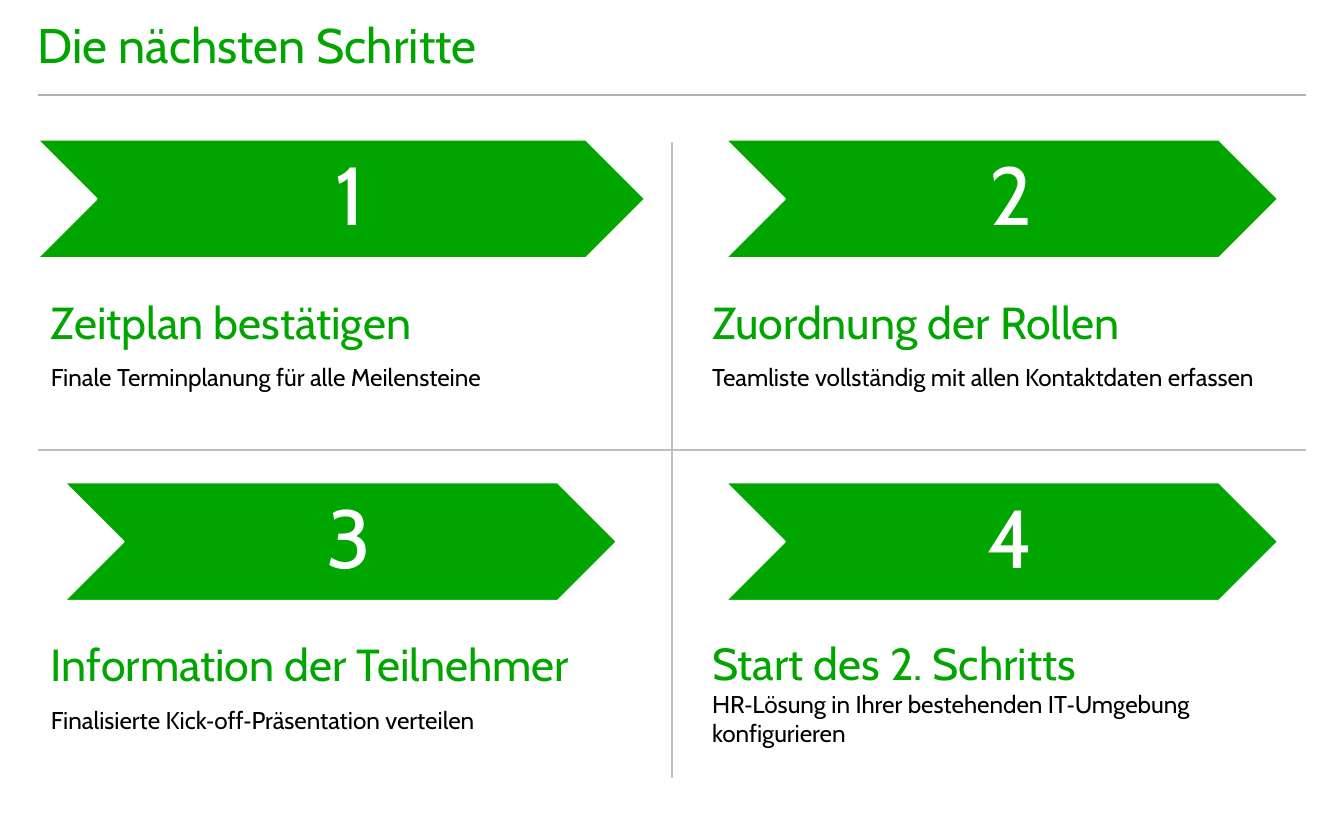
from lxml import etree
from pptx import Presentation
from pptx import util as u
from pptx.dml.color import RGBColor
from pptx.enum import shapes, text
from pptx.oxml.ns import qn

PX = 9144  # EMU per px, 100 px to the inch
FONT = "Cabin"
COLORS = {"green": "00A500", "white": "FFFFFF", "black": "000000",
          "divider": "BFBFBF", "title_rule": "B2B2B2"}

# number, chevron (left, width), text (left, top, width, height), heading, detail, detail spacing
TOP_ROW, BOTTOM_ROW = 104, 359
STEPS = [
    ("1", TOP_ROW, (28, 452), (28, 194, 453, 99),
     "Zeitplan bestätigen", "Finale Terminplanung für alle Meilensteine", 1.5),
    ("2", TOP_ROW, (540, 411), (520, 194, 453, 99),
     "Zuordnung der Rollen", "Teamliste vollständig mit allen Kontaktdaten erfassen", 1.5),
    ("3", BOTTOM_ROW, (48, 411), (28, 449, 453, 99),
     "Information der Teilnehmer", "Finalisierte Kick‑off‑Präsentation verteilen", 1.5),
    ("4", BOTTOM_ROW, (540, 411), (520, 448, 464, 114),
     "Start des 2. Schritts", "HR‑Lösung in Ihrer bestehenden IT‑Umgebung konfigurieren", 1.0),
]


def px(*lengths):
    return [u.Emu(length * PX) for length in lengths]


def color(name):
    return RGBColor.from_string(COLORS[name])


def set_margins(frame, left, top, right, bottom):
    (frame.margin_left, frame.margin_top,
     frame.margin_right, frame.margin_bottom) = px(left, top, right, bottom)


def write(paragraph, words, size, color_name, spacing=0.9, align=text.PP_ALIGN.LEFT):
    paragraph.alignment = align
    paragraph.line_spacing = spacing
    run = paragraph.add_run()
    run.text = words
    run.font.name = FONT
    run.font.size = u.Pt(size)
    run.font.color.rgb = color(color_name)


def add_rule(slide, start, end, color_name):
    rule = slide.shapes.add_connector(shapes.MSO_CONNECTOR.STRAIGHT, *px(*start, *end))
    rule.line.color.rgb = color(color_name)
    rule.line.width = u.Pt(1)
    etree.SubElement(rule._element.spPr, qn("a:effectLst"))


def add_title(slide, words):
    title = slide.shapes.title
    title.left, title.top, title.width, title.height = px(28, 0, 945, 71)
    frame = title.text_frame
    frame.auto_size = text.MSO_AUTO_SIZE.NONE
    frame.vertical_anchor = text.MSO_ANCHOR.MIDDLE
    set_margins(frame, 0, 0, 0, 0)
    write(frame.paragraphs[0], words, 26, "green")


def add_chevron(slide, number, left, top, width):
    chevron = slide.shapes.add_shape(shapes.MSO_SHAPE.CHEVRON, *px(left, top, width, 88))
    chevron.shadow.inherit = False
    chevron.fill.solid()
    chevron.fill.fore_color.rgb = color("green")
    chevron.line.color.rgb = color("white")
    chevron.line.width = u.Pt(1)
    frame = chevron.text_frame
    frame.vertical_anchor = text.MSO_ANCHOR.MIDDLE
    set_margins(frame, 19, 6, 6, 6)
    write(frame.paragraphs[0], number, 44, "white", align=text.PP_ALIGN.CENTER)


def add_step_text(slide, box, heading, detail, detail_spacing):
    frame = slide.shapes.add_textbox(*px(*box)).text_frame
    frame.word_wrap = True
    frame.auto_size = text.MSO_AUTO_SIZE.SHAPE_TO_FIT_TEXT
    write(frame.paragraphs[0], heading, 24, "green", 1.5)
    write(frame.add_paragraph(), detail, 13, "black", detail_spacing)


def main():
    presentation = Presentation()
    presentation.slide_width, presentation.slide_height = px(1000, 625)
    slide = presentation.slides.add_slide(presentation.slide_layouts[5])

    # Quadrant dividers and title rule
    add_rule(slide, (500, 106), (500, 579), "divider")
    add_rule(slide, (28, 335), (972, 335), "divider")
    add_rule(slide, (28, 71), (972, 71), "title_rule")

    add_title(slide, "Die nächsten Schritte")

    # One chevron and text block per step
    for number, top, (left, width), box, heading, detail, spacing in STEPS:
        add_chevron(slide, number, left, top, width)
        add_step_text(slide, box, heading, detail, spacing)

    presentation.save("out.pptx")


if __name__ == "__main__":
    main()
